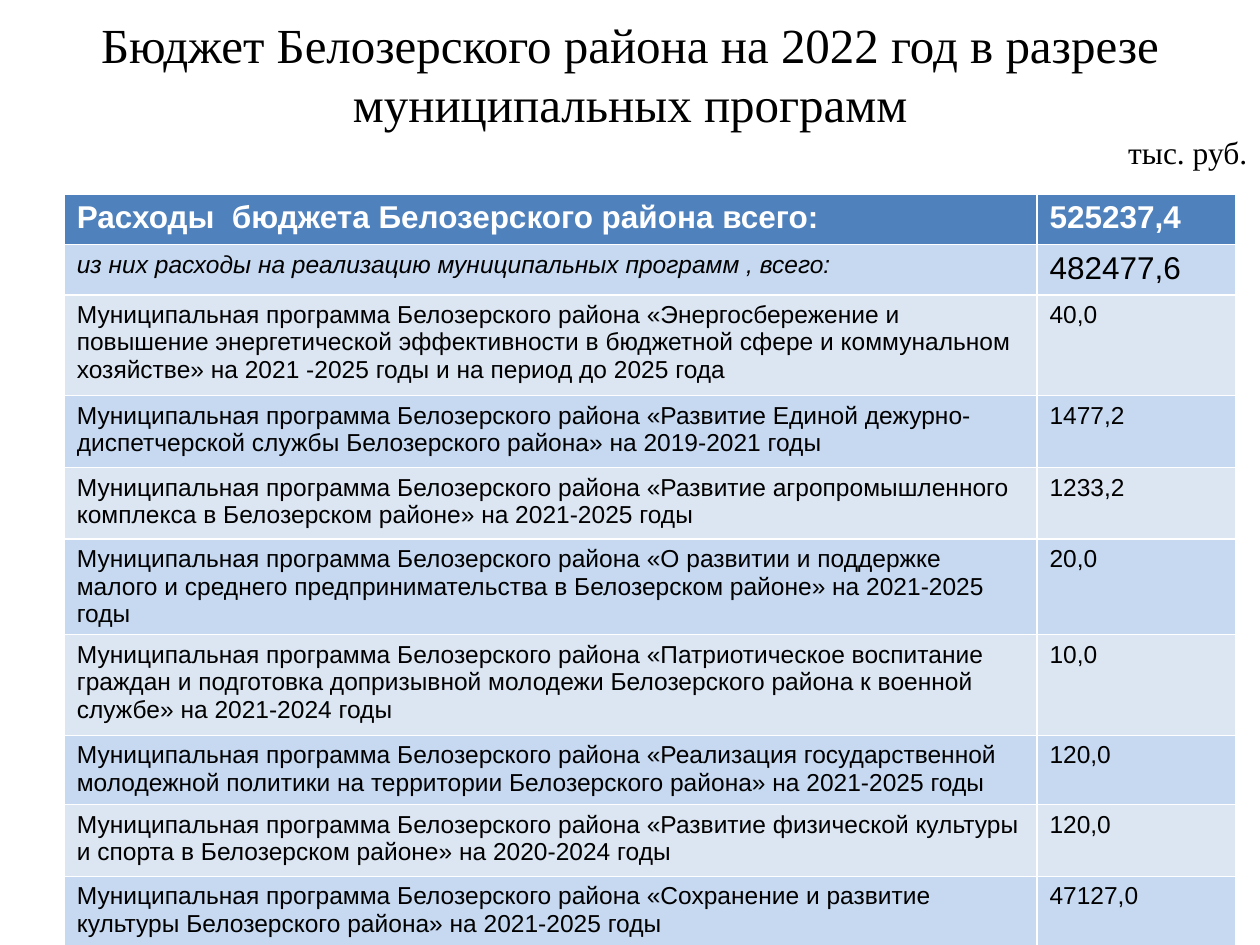
from pptx import Presentation
from pptx.dml.color import RGBColor
from pptx.enum.text import MSO_ANCHOR, MSO_AUTO_SIZE, PP_ALIGN
from pptx.util import Inches, Pt

CENTER, RIGHT = PP_ALIGN.CENTER, PP_ALIGN.RIGHT
MIDDLE = MSO_ANCHOR.MIDDLE
NO_AUTOFIT = MSO_AUTO_SIZE.NONE
BLACK = RGBColor(0x00, 0x00, 0x00)
WHITE = RGBColor(0xFF, 0xFF, 0xFF)
HEADER_BLUE = RGBColor(0x4F, 0x81, 0xBD)
BAND_BLUE = RGBColor(0xC6, 0xD9, 0xF1)
BAND_PALE = RGBColor(0xDC, 0xE6, 0xF2)

HEADING = "Бюджет Белозерского района на 2022 год в разрезе муниципальных программ"
UNIT = "тыс. руб."
TOTAL = ("Расходы  бюджета Белозерского района всего:", "525237,4")
PROGRAMS_TOTAL = ("из них расходы на реализацию муниципальных программ , всего:", "482477,6")
PROGRAM_PREFIX = "Муниципальная программа Белозерского района "
PROGRAMS = [
    ("«Энергосбережение и повышение энергетической эффективности в бюджетной сфере "
     "и коммунальном хозяйстве» на 2021 -2025 годы и на период до 2025 года", "40,0", 0.8),
    ("«Развитие Единой дежурно-диспетчерской службы Белозерского района» "
     "на 2019-2021 годы", "1477,2", 0.57),
    ("«Развитие агропромышленного комплекса в Белозерском районе» "
     "на 2021-2025 годы", "1233,2", 0.57),
    ("«О развитии и поддержке малого и среднего предпринимательства "
     "в Белозерском районе» на 2021-2025 годы", "20,0", 0.57),
    ("«Патриотическое воспитание граждан и подготовка допризывной молодежи "
     "Белозерского района к военной службе» на 2021-2024 годы", "10,0", 0.8),
    ("«Реализация государственной молодежной политики на территории "
     "Белозерского района» на 2021-2025 годы", "120,0", 0.55),
    ("«Развитие физической культуры и спорта в Белозерском районе» "
     "на 2020-2024 годы", "120,0", 0.57),
    ("«Сохранение и развитие культуры Белозерского района» "
     "на 2021-2025 годы", "47127,0", 0.57),
]
COLUMN_WIDTHS = (7.72, 1.58)
TOTAL_HEIGHT = 0.4


def style_font(paragraph, name, size, color, bold=False, italic=False):
    """Apply one font to a whole paragraph."""
    font = paragraph.font
    font.name, font.size = name, Pt(size)
    font.bold, font.italic = bold, italic
    font.color.rgb = color


def add_heading(slide):
    """Fill the title with the heading and the unit of measure."""
    title = slide.shapes.title
    title.left, title.top = Inches(0), Inches(0)
    title.width, title.height = Inches(10), Inches(1.47)
    frame = title.text_frame
    frame.auto_size = NO_AUTOFIT
    frame.vertical_anchor = MIDDLE
    frame.text = f"{HEADING}\n{UNIT}"
    for paragraph, size, alignment in zip(frame.paragraphs, (28, 18), (CENTER, RIGHT)):
        paragraph.alignment = alignment
        style_font(paragraph, "Times New Roman", size, BLACK)


def fill_row(row, texts, height, fill, sizes=(14, 14), color=BLACK, bold=False, italic_label=False):
    """Write a label and its amount into a table row."""
    row.height = Inches(height)
    for cell, text, size, italic in zip(row.cells, texts, sizes, (italic_label, False)):
        cell.text = text
        cell.fill.solid()
        cell.fill.fore_color.rgb = fill
        style_font(cell.text_frame.paragraphs[0], "Arial", size, color, bold, italic)


def add_budget_table(slide):
    """Add the expenditure table with its totals and programs."""
    height = 2 * TOTAL_HEIGHT + sum(program[2] for program in PROGRAMS)
    table = slide.shapes.add_table(
        len(PROGRAMS) + 2, len(COLUMN_WIDTHS), Inches(0.51), Inches(1.54),
        Inches(sum(COLUMN_WIDTHS)), Inches(height)).table
    for column, width in zip(table.columns, COLUMN_WIDTHS):
        column.width = Inches(width)
    total_row, programs_row, *program_rows = table.rows
    fill_row(total_row, TOTAL, TOTAL_HEIGHT, HEADER_BLUE, (18, 18), WHITE, bold=True)
    fill_row(programs_row, PROGRAMS_TOTAL, TOTAL_HEIGHT, BAND_BLUE, (14, 18), italic_label=True)
    for index, (row, (program, amount, row_height)) in enumerate(zip(program_rows, PROGRAMS)):
        band = BAND_BLUE if index % 2 else BAND_PALE
        fill_row(row, (PROGRAM_PREFIX + program, amount), row_height, band)


def main():
    """Build and save the budget slide."""
    presentation = Presentation()
    presentation.slide_width, presentation.slide_height = Inches(10), Inches(7.5)
    slide = presentation.slides.add_slide(presentation.slide_layouts[5])
    add_heading(slide)
    add_budget_table(slide)
    presentation.save("out.pptx")


if __name__ == "__main__":
    main()
